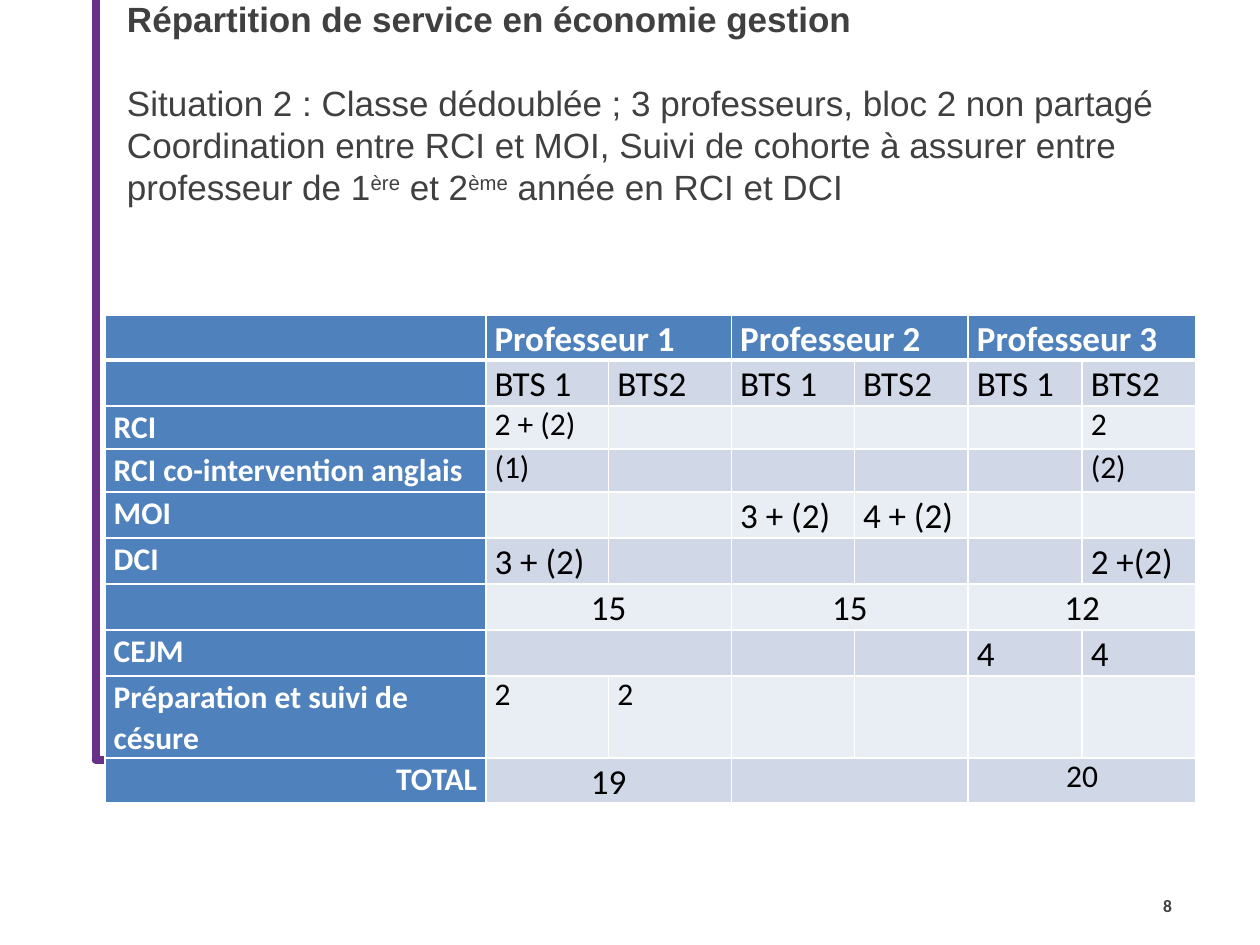
"""Build the slide on how teaching hours are shared between three teachers."""
from dataclasses import dataclass

import lxml.etree
import pptx
import pptx.dml.color
import pptx.enum.shapes
import pptx.enum.text
import pptx.oxml.ns
import pptx.util

Pt = pptx.util.Pt
RGBColor = pptx.dml.color.RGBColor
ALIGN = pptx.enum.text.PP_ALIGN
ANCHOR = pptx.enum.text.MSO_ANCHOR
qn = pptx.oxml.ns.qn

PURPLE = RGBColor(0x68, 0x30, 0x86)
GREY = RGBColor(0x40, 0x40, 0x40)
WHITE = RGBColor(0xFF, 0xFF, 0xFF)
BLACK = RGBColor(0x00, 0x00, 0x00)
BLUE = RGBColor(0x4F, 0x81, 0xBD)
BANDS = (RGBColor(0xE9, 0xED, 0xF4), RGBColor(0xD0, 0xD8, 0xE8))

COLUMN_WIDTHS = (217.6, 70.2, 70.2, 70.2, 65.1, 65.1, 65.1)


@dataclass(frozen=True)
class Line:
    start: tuple[float, float]
    end: tuple[float, float]


@dataclass(frozen=True)
class Entry:
    column: int
    text: str = ""
    size: float = 20
    span: int = 1


@dataclass(frozen=True)
class Row:
    label: str
    height: float
    entries: tuple[Entry, ...]


FRAME = (
    Line((54.7, 434.2), (550.1, 434.2)),
    Line((550.8, 434.2), (670.3, 353.5)),
    Line((54.7, 433.4), (54.7, 0)),
)

ROWS = (
    Row("", 25.1, tuple(Entry(2 * n - 1, f"Professeur {n}", span=2) for n in (1, 2, 3))),
    Row("", 26.3, tuple(Entry(n, "BTS 1" if n % 2 else "BTS2") for n in range(1, 7))),
    Row("RCI", 24.6, (Entry(1, "2 + (2)", 18), Entry(6, "2", 18))),
    Row("RCI co-intervention anglais", 24.6, (Entry(1, "(1)", 18), Entry(6, "(2)", 18))),
    Row("MOI", 26.3, (Entry(3, "3 + (2)"), Entry(4, "4 + (2)"))),
    Row("DCI", 26.3, (Entry(1, "3 + (2)"), Entry(6, "2 +(2)"))),
    Row("", 26.3, (Entry(1, "15", span=2), Entry(3, "15", span=2), Entry(5, "12", span=2))),
    Row("CEJM", 26.3, (Entry(1, span=2), Entry(5, "4"), Entry(6, "4"))),
    Row("Préparation et suivi de césure", 46.9, (Entry(1, "2", 18), Entry(2, "2", 18))),
    Row("TOTAL", 25.7, (Entry(1, "19", span=2), Entry(3, span=2), Entry(5, "20", 18, 2))),
)


def write_text(paragraph, text: str, *, size: float, color: RGBColor, font: str = "Calibri",
               bold: bool = False, align=ALIGN.LEFT, spacing=None, before: float = 0) -> None:
    """Write text into a paragraph, raising the parts enclosed in carets."""
    paragraph.alignment = align
    paragraph.space_before = Pt(before)
    if spacing is not None:
        paragraph.line_spacing = spacing
    for index, part in enumerate(text.split("^")):
        if not part:
            continue
        run = paragraph.add_run()
        run.text = part
        run.font.name = font
        run.font.size = Pt(size)
        run.font.bold = bold
        run.font.color.rgb = color
        if index % 2:
            run.font._element.set("baseline", "30000")


def add_line(slide, line: Line) -> None:
    """Draw one thick purple line of the frame."""
    connector = slide.shapes.add_connector(
        pptx.enum.shapes.MSO_CONNECTOR.STRAIGHT, *map(Pt, line.start + line.end))
    connector.line.color.rgb = PURPLE
    connector.line.width = Pt(4.5)
    connector.get_or_add_ln().set("cap", "rnd")
    lxml.etree.SubElement(connector._element.spPr, qn("a:effectLst"))


def add_text_box(slide, left: float, top: float, width: float, height: float):
    """Add a wrapping, vertically centred text box and return its text frame."""
    frame = slide.shapes.add_textbox(Pt(left), Pt(top), Pt(width), Pt(height)).text_frame
    frame.word_wrap = True
    frame.vertical_anchor = ANCHOR.MIDDLE
    return frame


def add_title(slide) -> None:
    """Add the heading and the description of the situation."""
    frame = add_text_box(slide, 65.5, 0.7, 612, 115.9)
    style = dict(size=20, color=GREY, font="Arial", spacing=Pt(24))
    write_text(frame.paragraphs[0], "Répartition de service en économie gestion",
               bold=True, **style)
    write_text(frame.add_paragraph(),
               "Situation 2 : Classe dédoublée ; 3 professeurs, bloc 2 non partagé",
               before=24, **style)
    write_text(frame.add_paragraph(),
               "Coordination entre RCI et MOI, Suivi de cohorte à assurer entre "
               "professeur de 1^ère^ et 2^ème^ année en RCI et DCI", **style)


def format_cell(cell, fill: RGBColor, top: float, bottom: float) -> None:
    """Set the insets, white borders and fill of a cell."""
    cell.margin_left = cell.margin_right = Pt(5)
    cell.margin_top = cell.margin_bottom = 0
    properties = cell._tc.get_or_add_tcPr()
    for side, width in (("L", 1), ("R", 1), ("T", top), ("B", bottom)):
        border = lxml.etree.SubElement(properties, qn(f"a:ln{side}"), w=str(Pt(width)))
        solid = lxml.etree.SubElement(border, qn("a:solidFill"))
        lxml.etree.SubElement(solid, qn("a:srgbClr"), val=str(WHITE))
    cell.fill.solid()
    cell.fill.fore_color.rgb = fill


def add_hours_table(slide) -> None:
    """Add the table of hours by subject, teacher and year."""
    table = slide.shapes.add_table(
        len(ROWS), len(COLUMN_WIDTHS), Pt(60), Pt(180),
        Pt(sum(COLUMN_WIDTHS)), Pt(sum(row.height for row in ROWS))).table
    table.first_row = table.horz_banding = False
    for column, width in zip(table.columns, COLUMN_WIDTHS):
        column.width = Pt(width)
    for index, row in enumerate(ROWS):
        header = index == 0
        table.rows[index].height = Pt(row.height)
        for column in range(len(COLUMN_WIDTHS)):
            fill = BLUE if header or column == 0 else BANDS[index % 2]
            format_cell(table.cell(index, column), fill,
                        top=3 if index == 1 else 1, bottom=3 if header else 1)
        write_text(table.cell(index, 0).text_frame.paragraphs[0], row.label,
                   size=18, color=WHITE, bold=True, spacing=1.07,
                   align=ALIGN.RIGHT if row.label == "TOTAL" else ALIGN.LEFT)
        for entry in row.entries:
            cell = table.cell(index, entry.column)
            if entry.span > 1:
                cell.merge(table.cell(index, entry.column + entry.span - 1))
            write_text(cell.text_frame.paragraphs[0], entry.text, size=entry.size,
                       color=WHITE if header else BLACK, bold=header,
                       spacing=1.07 if entry.size == 20 else 1.0,
                       align=ALIGN.CENTER if entry.span > 1 and not header else ALIGN.LEFT)


def main() -> None:
    """Build and save the presentation."""
    presentation = pptx.Presentation()
    presentation.slide_width, presentation.slide_height = Pt(720), Pt(540)
    slide = presentation.slides.add_slide(presentation.slide_layouts[6])
    for line in FRAME:
        add_line(slide, line)
    add_title(slide)
    number = add_text_box(slide, 645.1, 503.3, 31.7, 28.8)
    write_text(number.paragraphs[0], "8", size=10, color=GREY, bold=True, align=ALIGN.RIGHT)
    add_hours_table(slide)
    presentation.save("out.pptx")


if __name__ == "__main__":
    main()
